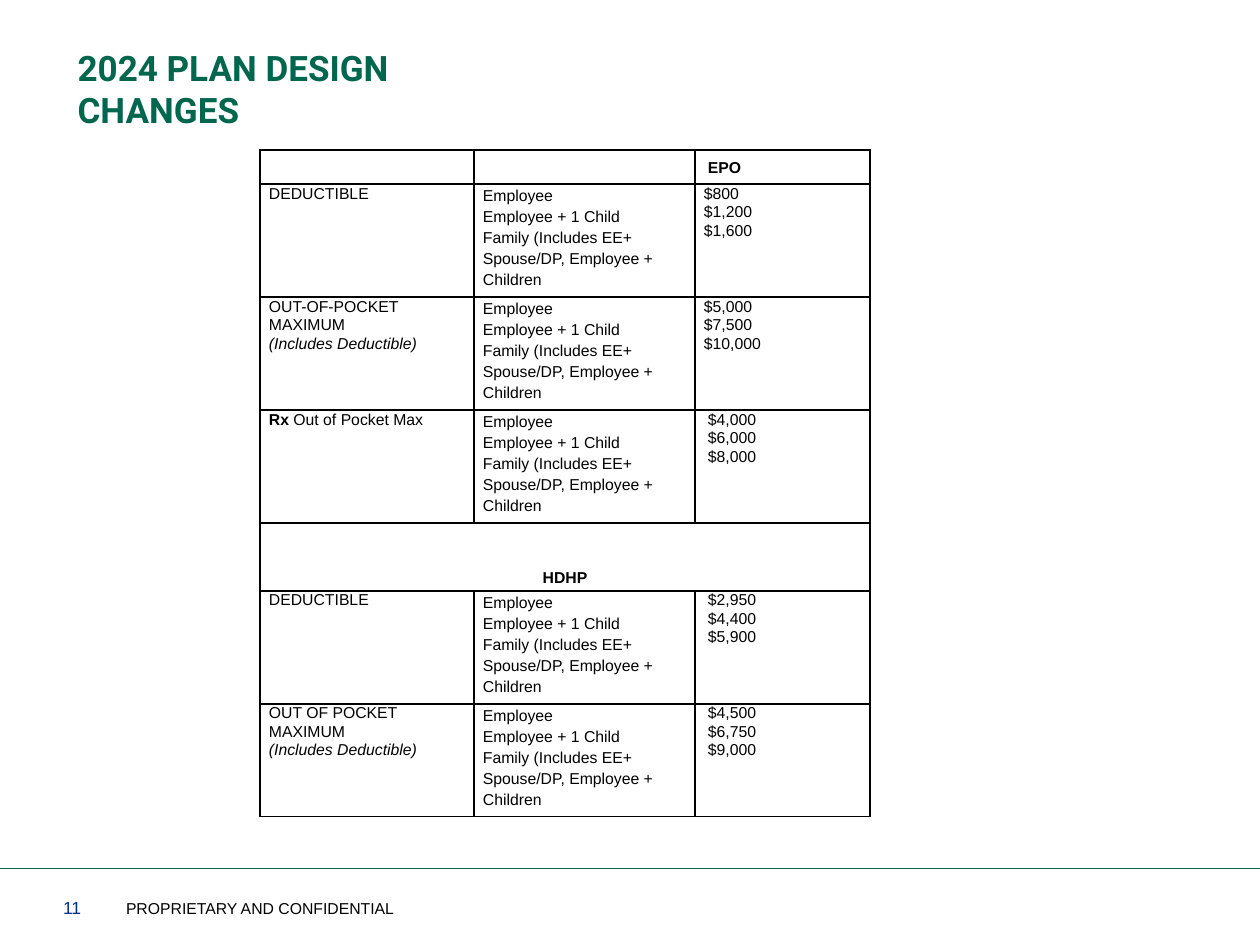
from dataclasses import dataclass
from typing import NamedTuple

from lxml.etree import SubElement
from pptx import Presentation
from pptx.dml.color import RGBColor
from pptx.enum.text import MSO_ANCHOR, MSO_AUTO_SIZE, PP_ALIGN
from pptx.oxml.ns import qn
from pptx.util import Emu, Pt

SCALE = 914400 / 126
GREEN, BLUE, BLACK = "00664D", "003087", "000000"


class Run(NamedTuple):
    text: str
    bold: bool = False
    italic: bool = False


@dataclass
class Cell:
    lines: tuple = ()
    spacing: float = 1.05
    left: int = 9
    bottom: int = 0
    align: PP_ALIGN = PP_ALIGN.LEFT
    anchor: MSO_ANCHOR = MSO_ANCHOR.TOP


@dataclass
class Label:
    text: str
    left: int
    width: int
    size: int
    color: str


def px(count: int) -> Emu:
    return Emu(round(count * SCALE))


def color(code: str) -> RGBColor:
    return RGBColor.from_string(code)


def style(run, size: int, code: str, **format) -> None:
    values = {"name": "Arial", "size": Pt(size), **format}
    for name, value in values.items():
        setattr(run.font, name, value)
    run.font.color.rgb = color(code)


def border(cell) -> None:
    """Give all four sides of a table cell a thin black line."""
    props = cell._tc.get_or_add_tcPr()
    for at, side in enumerate(("lnL", "lnR", "lnT", "lnB")):
        line = props.makeelement(qn(f"a:{side}"), {"w": str(Pt(1))})
        fill = SubElement(line, qn("a:solidFill"))
        SubElement(fill, qn("a:srgbClr"), val=BLACK)
        props.insert(at, line)


def fill_cell(cell, data: Cell) -> None:
    cell.fill.background()
    border(cell)
    margins = {"left": data.left, "right": 9, "top": 0, "bottom": data.bottom}
    for side, value in margins.items():
        setattr(cell, f"margin_{side}", px(value))
    cell.vertical_anchor = data.anchor
    frame = cell.text_frame
    for at, line in enumerate(data.lines):
        para = frame.add_paragraph() if at else frame.paragraphs[0]
        para.line_spacing = data.spacing
        para.alignment = data.align
        for part in line:
            run = para.add_run()
            run.text = part.text
            style(run, 9, BLACK, bold=part.bold, italic=part.italic)
    if not data.lines:
        SubElement(frame.paragraphs[0]._p, qn("a:endParaRPr"), sz="900")


def plain(*texts: str) -> tuple:
    return tuple((Run(text),) for text in texts)


def plan(name: tuple, costs: tuple, left: int = 13) -> list[Cell]:
    """Build one row: benefit, who is covered, and the amounts."""
    tiers = plain("Employee", "Employee + 1 Child",
                  "Family (Includes EE+ Spouse/DP, Employee + Children")
    return [Cell(name), Cell(tiers, 1.19), Cell(plain(*costs), left=left)]


def add_label(slide, data: Label) -> None:
    box = slide.shapes.add_textbox(px(data.left), px(892), px(data.width), px(32))
    frame = box.text_frame
    frame.word_wrap = True
    frame.margin_left = frame.margin_right = 0
    frame.vertical_anchor = MSO_ANCHOR.BOTTOM
    run = frame.paragraphs[0].add_run()
    run.text = data.text
    style(run, data.size, data.color)


def add_title(slide, text: str) -> None:
    title = slide.shapes.title
    title.left, title.top, title.width, title.height = map(px, (65, 40, 496, 55))
    frame = title.text_frame
    frame.word_wrap = True
    frame.auto_size = MSO_AUTO_SIZE.NONE
    frame.vertical_anchor = MSO_ANCHOR.TOP
    para = frame.paragraphs[0]
    para.alignment = PP_ALIGN.LEFT
    run = para.add_run()
    run.text = text
    style(run, 20, GREEN, name="Roboto", bold=True)


def add_rule(slide) -> None:
    rule = slide.shapes.add_connector(1, 0, px(868), px(1260), px(868))
    rule.line.color.rgb = color(GREEN)
    rule.line.width = Pt(0.5)
    SubElement(rule._element.spPr, qn("a:effectLst"))


def add_plans(slide) -> None:
    note = (Run("(Includes Deductible)", italic=True),)
    band = Cell(((Run("HDHP", bold=True),),), 1.5, bottom=4,
                align=PP_ALIGN.CENTER, anchor=MSO_ANCHOR.BOTTOM)
    rows = [
        [Cell(), Cell(), Cell(((Run("EPO", bold=True),),), 1.5, left=13)],
        plan(plain("DEDUCTIBLE"), ("$800", "$1,200", "$1,600"), 9),
        plan((*plain("OUT-OF-POCKET MAXIMUM"), note),
             ("$5,000", "$7,500", "$10,000"), 9),
        plan(((Run("Rx", bold=True), Run(" Out of Pocket Max")),),
             ("$4,000", "$6,000", "$8,000")),
        [band, Cell(), Cell()],
        plan(plain("DEDUCTIBLE"), ("$2,950", "$4,400", "$5,900")),
        plan((*plain("OUT OF POCKET MAXIMUM"), note),
             ("$4,500", "$6,750", "$9,000")),
    ]
    widths = (214, 221, 175)
    heights = [{0: 34, 4: 68}.get(at, 113) for at in range(len(rows))]
    table = slide.shapes.add_table(len(rows), len(widths), px(260), px(150),
                                   px(sum(widths)), px(sum(heights))).table
    table.first_row = table.horz_banding = False
    for column, width in zip(table.columns, widths):
        column.width = px(width)
    for at, (row, height) in enumerate(zip(rows, heights)):
        table.rows[at].height = px(height)
        for col, data in enumerate(row):
            fill_cell(table.cell(at, col), data)
    table.cell(4, 0).merge(table.cell(4, 2))


def main() -> None:
    deck = Presentation()
    deck.slide_width, deck.slide_height = px(1260), px(945)
    slide = deck.slides.add_slide(deck.slide_layouts[5])
    add_rule(slide)
    for label in (Label("11", 63, 68, 10, BLUE),
                  Label("PROPRIETARY AND CONFIDENTIAL", 126, 296, 9, BLACK)):
        add_label(slide, label)
    add_title(slide, "2024 PLAN DESIGN CHANGES")
    add_plans(slide)
    deck.save("out.pptx")


if __name__ == "__main__":
    main()
